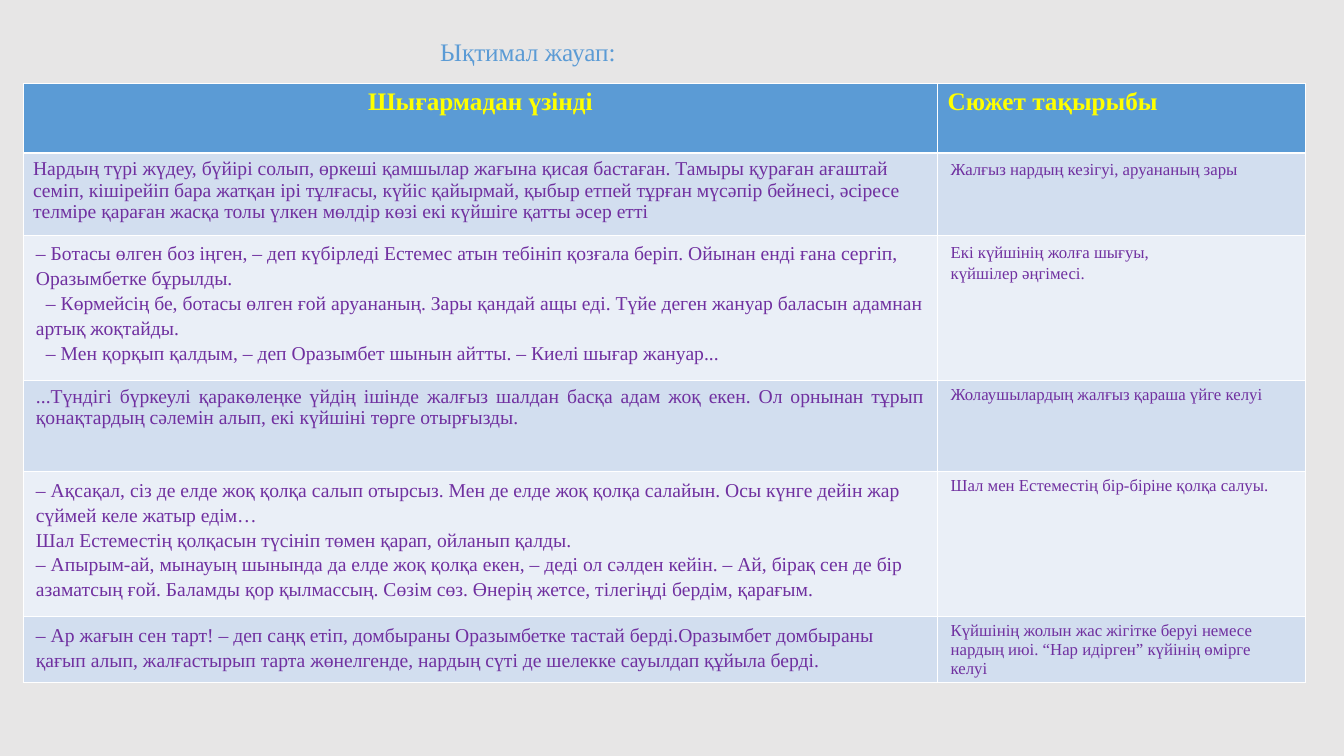
from lxml.etree import SubElement
from pptx import Presentation
from pptx.dml.color import RGBColor
from pptx.enum.text import MSO_ANCHOR, PP_ALIGN
from pptx.oxml.ns import qn
from pptx.util import Pt

TITLE = "Ықтимал жауап:"
HEADINGS = ["Шығармадан үзінді", "Сюжет тақырыбы"]
EPISODES = [
    (["Нардың түрі жүдеу, бүйірі солып, өркеші қамшылар жағына қисая бастаған. Тамыры қураған ағаштай семіп, кішірейіп бара жатқан ірі тұлғасы, күйіс қайырмай, қыбыр етпей тұрған мүсәпір бейнесі, әсіресе телміре қараған жасқа толы үлкен мөлдір көзі екі күйшіге қатты әсер етті"],
     ["Жалғыз нардың кезігуі, аруананың зары"]),
    (["– Ботасы өлген боз іңген, – деп күбірледі Естемес атын тебініп қозғала беріп. Ойынан енді ғана сергіп, Оразымбетке бұрылды.",
      "– Көрмейсің бе, ботасы өлген ғой аруананың. Зары қандай ащы еді. Түйе деген жануар баласын адамнан артық жоқтайды.",
      "– Мен қорқып қалдым, – деп Оразымбет шынын айтты. – Киелі шығар жануар..."],
     ["Екі күйшінің жолға шығуы,", "күйшілер әңгімесі."]),
    (["...Түндігі бүркеулі қаракөлеңке үйдің ішінде жалғыз шалдан басқа адам жоқ екен. Ол орнынан тұрып қонақтардың сәлемін алып, екі күйшіні төрге отырғызды."],
     ["Жолаушылардың жалғыз қараша үйге келуі"]),
    (["– Ақсақал, сіз де елде жоқ қолқа салып отырсыз. Мен де елде жоқ қолқа салайын. Осы күнге дейін жар сүймей келе жатыр едім…",
      "Шал Естеместің қолқасын түсініп төмен қарап, ойланып қалды.",
      "– Апырым-ай, мынауың шынында да елде жоқ қолқа екен, – деді ол сәлден кейін. – Ай, бірақ сен де бір азаматсың ғой. Баламды қор қылмассың. Сөзім сөз. Өнерің жетсе, тілегіңді бердім, қарағым."],
     ["Шал мен Естеместің бір-біріне қолқа салуы."]),
    (["– Ар жағын сен тарт! – деп саңқ етіп, домбыраны Оразымбетке тастай берді.Оразымбет домбыраны қағып алып, жалғастырып тарта жөнелгенде, нардың сүті де шелекке сауылдап құйыла берді."],
     ["Күйшінің жолын жас жігітке беруі немесе", "нардың июі. “Нар идірген” күйінің өмірге келуі"]),
]
LINE_SPACINGS = [(1, 1), (1, 1.15), (1.15, 1.15), (1.01, 1), (1.15, 1), (1.15, 1)]
ALIGNMENTS = {(0, 0): PP_ALIGN.CENTER, (3, 0): PP_ALIGN.JUSTIFY}
NARROW_INSETS = {(0, 0), (0, 1), (1, 0)}
FIRST_LINE_INDENTS = {(2, 0, 1): 10, (2, 0, 2): 10}
COLUMN_WIDTHS = [914, 367]
ROW_HEIGHTS = [70, 82, 145, 91, 145, 64]

FONT = "Times New Roman"
BACKGROUND = RGBColor(0xE7, 0xE6, 0xE6)
BLUE = RGBColor(0x5B, 0x9B, 0xD5)
YELLOW = RGBColor(0xFF, 0xFF, 0x00)
PURPLE = RGBColor(0x70, 0x30, 0xA0)
BANDS = [RGBColor(0xEA, 0xEF, 0xF7), RGBColor(0xD2, 0xDE, 0xEF)]
WHITE = RGBColor(0xFF, 0xFF, 0xFF)


def px(length):
    return length * 9080


def style_text(paragraph, size, color, bold=False):
    for run in paragraph.runs:
        run.font.name = FONT
        run.font.size = Pt(size)
        run.font.bold = bold
        run.font.color.rgb = color


def add_borders(cell, row):
    widths = {"lnL": 0.45, "lnR": 0.45,
              "lnT": 1.47 if row == 1 else 0.45,
              "lnB": 1.47 if row == 0 else 0.45}
    properties = cell._tc.get_or_add_tcPr()
    for side, width in widths.items():
        border = SubElement(properties, qn(f"a:{side}"), w=str(Pt(width)))
        border_fill = SubElement(border, qn("a:solidFill"))
        SubElement(border_fill, qn("a:srgbClr"), val=str(WHITE))


def fill_cell(cell, row, column, lines):
    heading = row == 0
    add_borders(cell, row)
    cell.fill.solid()
    cell.fill.fore_color.rgb = BLUE if heading else BANDS[row % 2]
    cell.margin_left = cell.margin_right = px(10 if (row, column) in NARROW_INSETS else 13)
    cell.margin_top = cell.margin_bottom = px(5)
    cell.vertical_anchor = MSO_ANCHOR.TOP
    cell.text_frame.text = "\n".join(lines)
    size = 18 if heading else (14, 12)[column]
    for index, paragraph in enumerate(cell.text_frame.paragraphs):
        paragraph.alignment = ALIGNMENTS.get((row, column), PP_ALIGN.LEFT)
        paragraph.line_spacing = float(LINE_SPACINGS[row][column])
        indent = FIRST_LINE_INDENTS.get((row, column, index))
        if indent:
            paragraph._p.get_or_add_pPr().set("indent", str(px(indent)))
        style_text(paragraph, size, YELLOW if heading else PURPLE, heading)


def main():
    presentation = Presentation()
    presentation.slide_width, presentation.slide_height = px(1343), px(755)
    slide = presentation.slides.add_slide(presentation.slide_layouts[5])
    slide.background.fill.solid()
    slide.background.fill.fore_color.rgb = BACKGROUND

    title = slide.shapes.title
    title.left, title.top, title.width, title.height = map(px, (426, 31, 203, 40))
    title.text_frame.text = TITLE
    title.text_frame.word_wrap = False
    title.text_frame.vertical_anchor = MSO_ANCHOR.TOP
    title.text_frame.paragraphs[0].alignment = PP_ALIGN.CENTER
    style_text(title.text_frame.paragraphs[0], 18, BLUE)

    rows = [[[heading] for heading in HEADINGS], *EPISODES]
    episodes = slide.shapes.add_table(
        len(rows), len(HEADINGS), px(23), px(83),
        px(sum(COLUMN_WIDTHS)), px(sum(ROW_HEIGHTS))).table
    for column, width in zip(episodes.columns, COLUMN_WIDTHS):
        column.width = px(width)
    for row, height in zip(episodes.rows, ROW_HEIGHTS):
        row.height = px(height)
    for row, entries in enumerate(rows):
        for column, lines in enumerate(entries):
            fill_cell(episodes.cell(row, column), row, column, lines)

    presentation.save("out.pptx")


if __name__ == "__main__":
    main()
